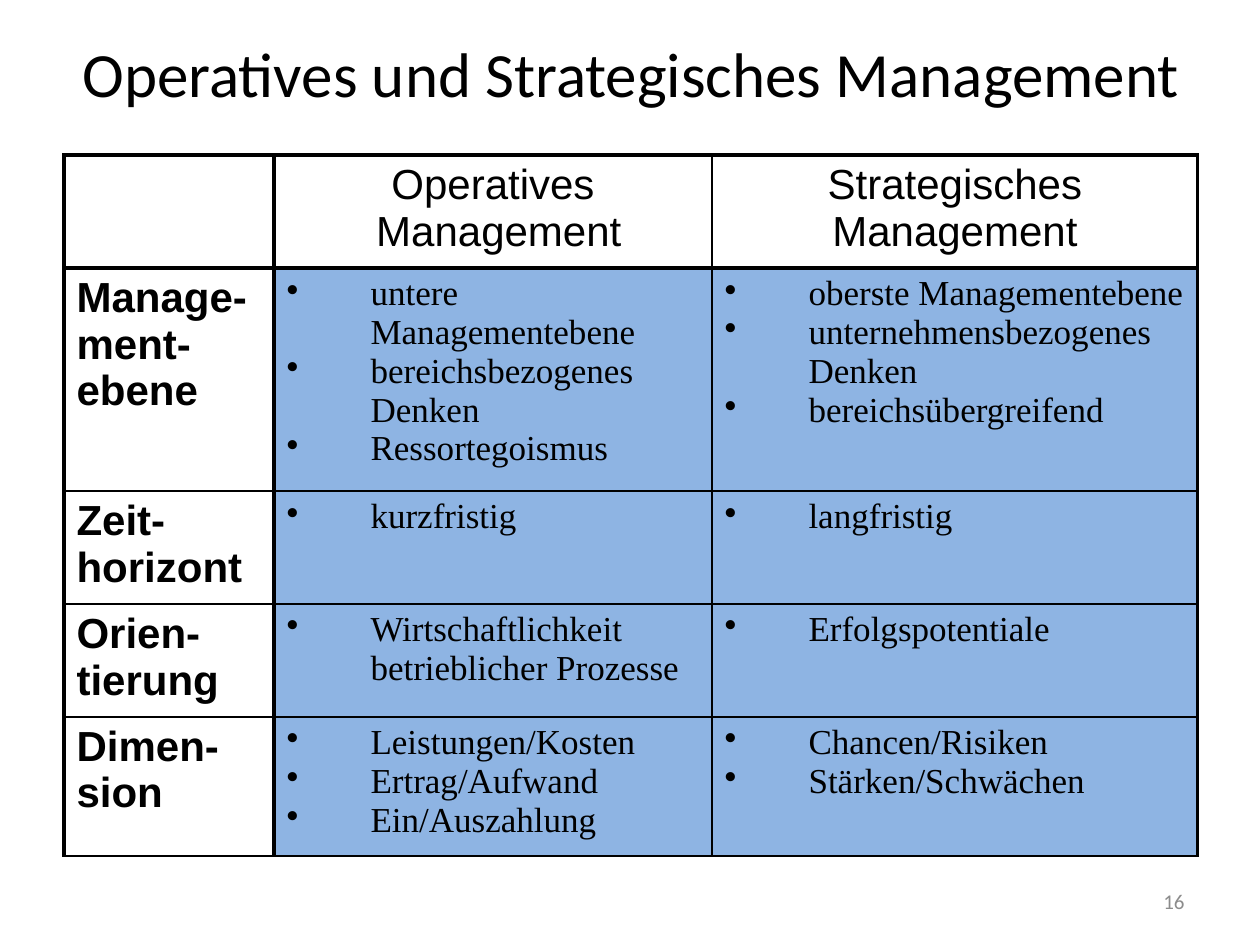
from dataclasses import dataclass

from lxml.etree import SubElement
from pptx import Presentation
from pptx.dml.color import RGBColor
from pptx.enum.text import MSO_ANCHOR as Anchor, PP_ALIGN as Align
from pptx.oxml.ns import qn
from pptx.util import Emu, Pt

EMU_PER_PX = 914400 // 126
BLACK, WHITE, BLUE, GRAY = "000000", "FFFFFF", "8EB4E3", "8C8C8C"
COLUMN_WIDTHS = (210, 438, 486)
ROW_HEIGHTS = (113, 223, 113, 113, 139)
HANGING = 84
TAB_STOP = 32
THIN, THICK = 1, 2


@dataclass(frozen=True)
class TextStyle:
    font: str
    size: int
    color: str = BLACK
    bold: bool = False
    align: Align = Align.LEFT


@dataclass(frozen=True)
class Criterion:
    label: str
    operative: str
    strategic: str


TITLE = TextStyle("Calibri", 36, align=Align.CENTER)
HEADING = TextStyle("Arial", 24, align=Align.CENTER)
LABEL = TextStyle("Arial", 24, bold=True)
ITEM = TextStyle("Times New Roman", 20)
PAGE_NUMBER = TextStyle("Calibri", 12, GRAY, align=Align.RIGHT)

CRITERIA = (
    Criterion("", "Operatives\n Management", "Strategisches\nManagement"),
    Criterion(
        "Manage-\nment-\nebene",
        "untere Managementebene\nbereichsbezogenes Denken\nRessortegoismus",
        "oberste Managementebene\nunternehmensbezogenes Denken\nbereichsübergreifend",
    ),
    Criterion("Zeit-\nhorizont", "kurzfristig", "langfristig"),
    Criterion("Orien-\ntierung", "Wirtschaftlichkeit betrieblicher Prozesse", "Erfolgspotentiale"),
    Criterion(
        "Dimen-\nsion",
        "Leistungen/Kosten\nErtrag/Aufwand\nEin/Auszahlung",
        "Chancen/Risiken\nStärken/Schwächen",
    ),
)


def px(length: int) -> Emu:
    return Emu(length * EMU_PER_PX)


def rgb(color: str) -> RGBColor:
    return RGBColor.from_string(color)


def write(frame, text: str, style: TextStyle) -> None:
    frame.text = text
    for paragraph in frame.paragraphs:
        paragraph.alignment = style.align
        for run in paragraph.runs:
            run.font.name = style.font
            run.font.size = Pt(style.size)
            run.font.bold = style.bold
            run.font.color.rgb = rgb(style.color)


def place(shape, left: int, top: int, width: int, height: int) -> None:
    shape.left, shape.top = px(left), px(top)
    shape.width, shape.height = px(width), px(height)


def hang(paragraph, bulleted: bool) -> None:
    properties = paragraph._p.get_or_add_pPr()
    properties.set("marL", str(px(HANGING)))
    properties.set("indent", str(-px(HANGING)))
    if bulleted:
        SubElement(properties, qn("a:buFontTx"))
        SubElement(properties, qn("a:buChar"), char="•")
        tabs = SubElement(properties, qn("a:tabLst"))
        SubElement(tabs, qn("a:tab"), pos=str(px(TAB_STOP)), algn="l")


def set_borders(cell, row: int, column: int) -> None:
    last_column = len(COLUMN_WIDTHS) - 1
    widths = {
        "lnL": THICK if column < 2 else THIN,
        "lnR": THICK if column in (0, last_column) else THIN,
        "lnT": THICK if row < 2 else THIN,
        "lnB": THICK if row == 0 else THIN,
    }
    properties = cell._tc.get_or_add_tcPr()
    for position, (side, width) in enumerate(widths.items()):
        line = SubElement(properties, qn(f"a:{side}"), w=str(Pt(width)))
        fill = SubElement(line, qn("a:solidFill"))
        SubElement(fill, qn("a:srgbClr"), val=BLACK)
        properties.insert(position, line)


def fill_cell(cell, text: str, row: int, column: int) -> None:
    is_item = row > 0 and column > 0
    style = ITEM if is_item else HEADING if row == 0 else LABEL
    write(cell.text_frame, text, style)
    if text:
        for paragraph in cell.text_frame.paragraphs:
            hang(paragraph, is_item)
    cell.fill.solid()
    cell.fill.fore_color.rgb = rgb(BLUE if is_item else WHITE)
    set_borders(cell, row, column)


def add_comparison(slide, left: int, top: int) -> None:
    frame = slide.shapes.add_table(
        len(ROW_HEIGHTS), len(COLUMN_WIDTHS), px(left), px(top),
        px(sum(COLUMN_WIDTHS)), px(sum(ROW_HEIGHTS)),
    )
    comparison = frame.table
    comparison.first_row = comparison.horz_banding = False
    for column, width in zip(comparison.columns, COLUMN_WIDTHS):
        column.width = px(width)
    for row, height in zip(comparison.rows, ROW_HEIGHTS):
        row.height = px(height)
    for row, criterion in enumerate(CRITERIA):
        texts = (criterion.label, criterion.operative, criterion.strategic)
        for column, text in enumerate(texts):
            fill_cell(comparison.cell(row, column), text, row, column)


def main() -> None:
    presentation = Presentation()
    presentation.slide_width, presentation.slide_height = px(1260), px(945)
    slide = presentation.slides.add_slide(presentation.slide_layouts[5])

    title = slide.shapes.title
    place(title, 64, 0, 1134, 145)
    write(title.text_frame, "Operatives und Strategisches Management", TITLE)
    title.text_frame.vertical_anchor = Anchor.MIDDLE

    add_comparison(slide, 64, 155)

    page_number = slide.shapes.add_textbox(px(903), px(876), px(294), px(50))
    page_number.text_frame.word_wrap = True
    page_number.text_frame.vertical_anchor = Anchor.MIDDLE
    write(page_number.text_frame, "16", PAGE_NUMBER)

    presentation.save("out.pptx")


if __name__ == "__main__":
    main()
